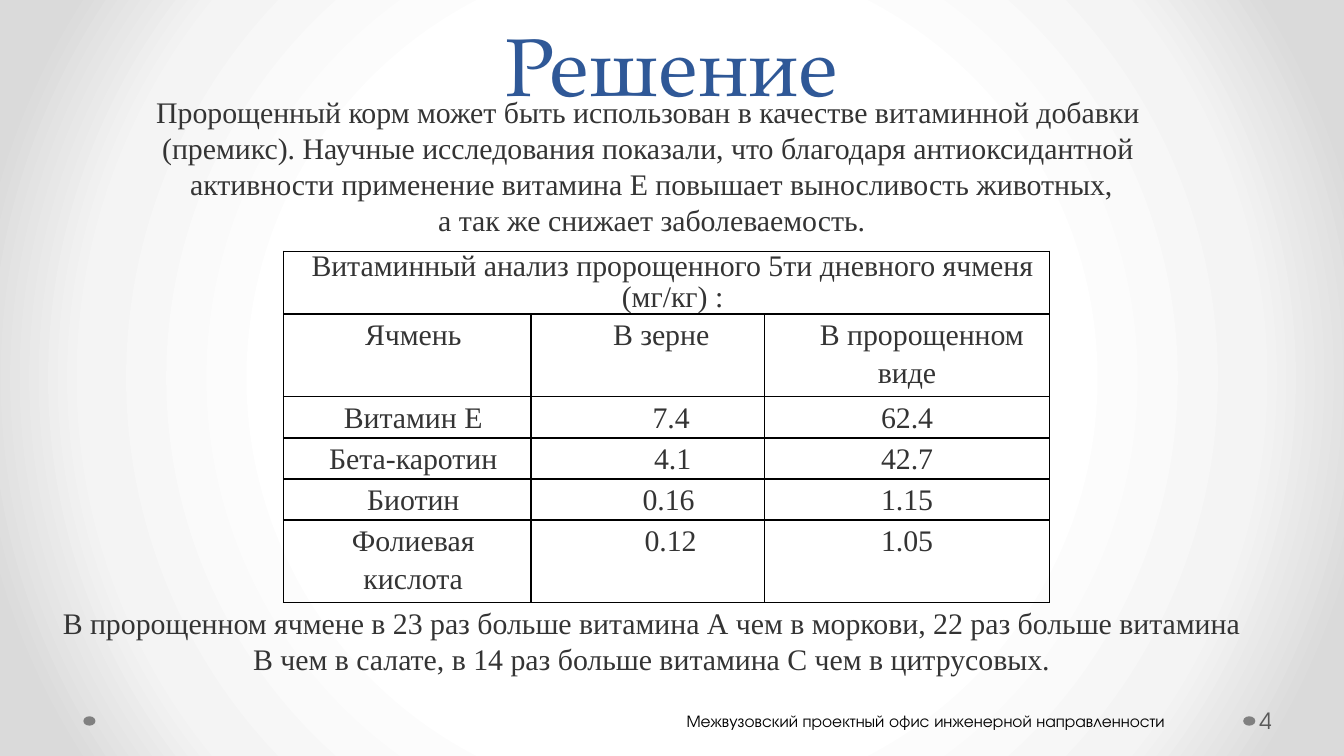
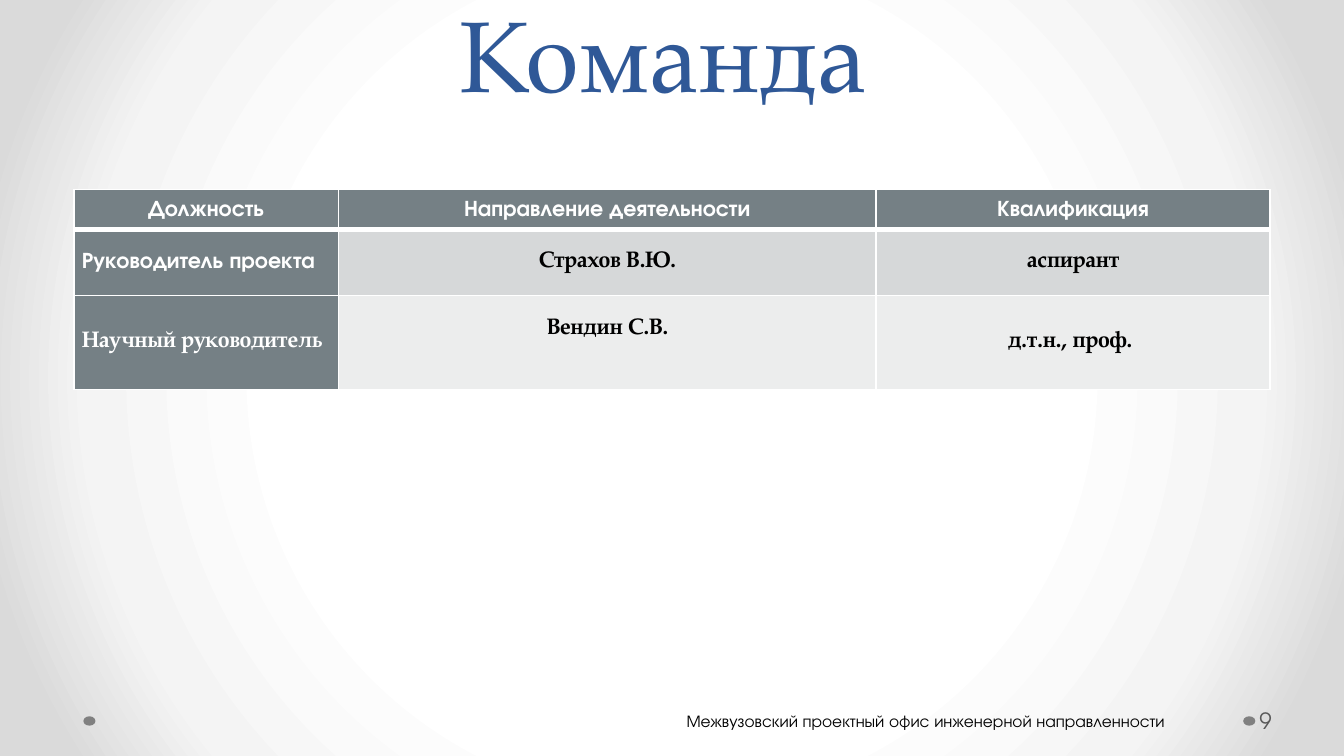
from dataclasses import dataclass

from lxml import etree
from pptx import Presentation
from pptx.dml.color import RGBColor as Rgb
from pptx.enum.shapes import MSO_SHAPE as Shape
from pptx.enum.text import MSO_ANCHOR as Anchor, PP_ALIGN as Align
from pptx.oxml.ns import qn
from pptx.util import Inches, Pt


@dataclass(frozen=True)
class Theme:
    serif: str = "TeX Gyre Pagella"
    sans: str = "TeX Gyre Adventor"
    body: str = "Times New Roman"
    title: str = "2F5897"
    text: str = "343434"
    black: str = "000000"
    white: str = "FFFFFF"
    number: str = "595959"
    dot: str = "808080"
    header: str = "758085"
    bands: tuple = ("D6D8D9", "ECEDED")
    backdrop: tuple = ((50, "FFFFFF"), (76, "F4F4F4"), (92, "DADADA"))
    body_size: int = 16
    small_size: int = 12
    footer_size: int = 9


theme = Theme()
FOOTER = "Межвузовский проектный офис инженерной направленности"


def write(frame, lines, size, font, color, align=Align.LEFT, spacing=None, bold=False):
    """Write one paragraph for each line, all in the same style."""
    for index, line in enumerate(lines):
        para = frame.add_paragraph() if index else frame.paragraphs[0]
        para.text = line
        para.alignment = align
        para.line_spacing = spacing
        para.font.size = Pt(size)
        para.font.name = font
        para.font.bold = bold
        para.font.color.rgb = Rgb.from_string(color)


def style_cell(cell, side, color, top=1, bottom=1, fill=None):
    """Set the side insets, borders and fill of a table cell."""
    cell.margin_left = cell.margin_right = Inches(side)
    cell.margin_top = cell.margin_bottom = 0
    properties = cell._tc.get_or_add_tcPr()
    for edge, width in (("lnL", 1), ("lnR", 1), ("lnT", top), ("lnB", bottom)):
        line = etree.SubElement(properties, qn(f"a:{edge}"), w=str(Pt(width)))
        paint = etree.SubElement(line, qn("a:solidFill"))
        etree.SubElement(paint, qn("a:srgbClr"), val=color)
    if fill:
        cell.fill.solid()
        cell.fill.fore_color.rgb = Rgb.from_string(fill)
    else:
        cell.fill.background()


# Widescreen deck, 16:9
deck = Presentation()
deck.slide_width = Inches(10)
deck.slide_height = Inches(10) * 9 // 16

# Shared background: radial gradient on the master
master = deck.slide_master
master.background.fill.solid()
solid = master.element.find(".//" + qn("p:bgPr") + "/" + qn("a:solidFill"))
gradient = etree.Element(qn("a:gradFill"), rotWithShape="1")
stops = etree.SubElement(gradient, qn("a:gsLst"))
for position, color in theme.backdrop:
    stop = etree.SubElement(stops, qn("a:gs"), pos=str(position * 1000))
    etree.SubElement(stop, qn("a:srgbClr"), val=color)
circle = etree.SubElement(gradient, qn("a:path"), path="circle")
etree.SubElement(circle, qn("a:fillToRect"), l="50000", t="50000", r="50000", b="50000")
solid.getparent().replace(solid, gradient)

# Shared parts: dots, title, footer and page number
pages = []
for title, title_left, title_size, number in (
    ("Решение", 0.5, 44, "4"),
    ("Команда", 0.43, 54, "9"),
):
    page = deck.slides.add_slide(deck.slide_layouts[6])
    pages.append(page)
    for left in (9.25, 0.62):
        dot = page.shapes.add_shape(
            Shape.OVAL, Inches(left), Inches(5.33), Inches(0.09), Inches(0.07))
        dot.shadow.inherit = False
        dot.fill.solid()
        dot.fill.fore_color.rgb = Rgb.from_string(theme.dot)
        dot.line.fill.background()

    box = page.shapes.add_textbox(
        Inches(title_left), Inches(-0.42), Inches(9), Inches(1.31))
    box.text_frame.word_wrap = True
    box.text_frame.vertical_anchor = Anchor.BOTTOM
    write(box.text_frame, [title], title_size, theme.serif, theme.title,
          Align.CENTER, Pt(58))

    box = page.shapes.add_textbox(
        Inches(5.01), Inches(5.24), Inches(4.18), Inches(0.25))
    box.text_frame.word_wrap = False
    write(box.text_frame, [FOOTER], theme.footer_size, theme.sans, theme.black)

    box = page.shapes.add_textbox(
        Inches(9.34), Inches(5.21), Inches(0.61), Inches(0.3))
    box.text_frame.word_wrap = True
    box.text_frame.margin_left = Inches(0.03)
    box.text_frame.margin_right = Inches(0.05)
    box.text_frame.vertical_anchor = Anchor.MIDDLE
    write(box.text_frame, [number], theme.small_size, theme.sans, theme.number)

solution, team = pages

# Solution: text above and below the table
INTRO = (
    "Пророщенный корм может быть использован в качестве витаминной добавки ",
    "(премикс). Научные исследования показали, что благодаря антиоксидантной ",
    "активности применение витамина Е повышает выносливость животных,",
    "а так же снижает заболеваемость.",
)
CONCLUSION = (
    "В пророщенном ячмене в 23 раз больше витамина А чем в моркови, "
    "22 раз больше витамина В чем в салате, "
    "в 14 раз больше витамина С чем в цитрусовых.",
)
for lines, top, height in ((INTRO, 0.65, 1.16), (CONCLUSION, 4.45, 0.63)):
    box = solution.shapes.add_textbox(
        Inches(0.16), Inches(top), Inches(9.38), Inches(height))
    box.text_frame.word_wrap = True
    box.text_frame.margin_left = box.text_frame.margin_right = Inches(0.25)
    write(box.text_frame, lines, theme.body_size, theme.body, theme.text,
          Align.CENTER)

# Solution: vitamin table
VITAMINS = (
    ("Витаминный анализ пророщенного 5ти дневного ячменя (мг/кг) :", "", ""),
    ("Ячмень", "В зерне", "В пророщенном виде"),
    ("Витамин Е", "7.4", "62.4"),
    ("Бета-каротин", "4.1", "42.7"),
    ("Биотин", "0.16", "1.15"),
    ("Фолиевая кислота", "0.12", "1.05"),
)
GRAIN_INDENTS = (0, 0.2, 0.35, 0.37, 0.31, 0.34)
frame = solution.shapes.add_table(
    6, 3, Inches(2.11), Inches(1.87), Inches(5.7), Inches(2.5))
table = frame.table
table.first_row = table.horz_banding = False
for column, width in zip(table.columns, (1.84, 1.74, 2.12)):
    column.width = Inches(width)
for row, height in zip(table.rows, (0.38, 0.53, 0.25, 0.25, 0.25, 0.53)):
    row.height = Inches(height)
frame.height = Inches(2.5)
table.cell(0, 0).merge(table.cell(0, 2))
for r, values in enumerate(VITAMINS):
    for c, value in enumerate(values):
        cell = table.cell(r, c)
        style_cell(cell, 0.07, theme.black)
        if not value:
            continue
        write(cell.text_frame, [value], theme.body_size, theme.body, theme.text,
              Align.CENTER, 1.15 if r else Pt(16.8))
        indent = cell.text_frame.paragraphs[0]._p.get_or_add_pPr()
        indent.set("marL", str(Inches((0.09, GRAIN_INDENTS[r], 0)[c])))
        indent.set("indent", str(Inches(0.22 if (r, c) == (1, 2) else 0)))

# Team: roles table
ROLES = (
    ("Должность", "Направление деятельности", "Квалификация"),
    ("Руководитель проекта", "Страхов В.Ю.", "аспирант"),
    ("Научный руководитель", "Вендин С.В.", "д.т.н., проф. "),
)
table = team.shapes.add_table(
    3, 3, Inches(0.55), Inches(1.41), Inches(8.9), Inches(1.49)).table
for column, width in zip(table.columns, (1.97, 4, 2.93)):
    column.width = Inches(width)
for row, height in zip(table.rows, (0.3, 0.49, 0.7)):
    row.height = Inches(height)
for r, values in enumerate(ROLES):
    for c, value in enumerate(values):
        cell = table.cell(r, c)
        heading = r == 0 or c == 0
        sans = r == 0 or (r, c) == (1, 0)
        style_cell(cell, 0.06, theme.white, top=3 if r == 1 else 1,
                   bottom=1 if r else 3,
                   fill=theme.header if heading else theme.bands[r - 1])
        cell.vertical_anchor = Anchor.MIDDLE
        write(cell.text_frame, [value], theme.small_size,
              theme.sans if sans else theme.serif,
              theme.white if heading else theme.black,
              Align.LEFT if r and c == 0 else Align.CENTER,
              1.0 if r else 1.07, bold=True)
# The supervisor's name sits above the middle of its row
table.cell(2, 1).margin_bottom = Inches(0.2)

deck.save("out.pptx")
